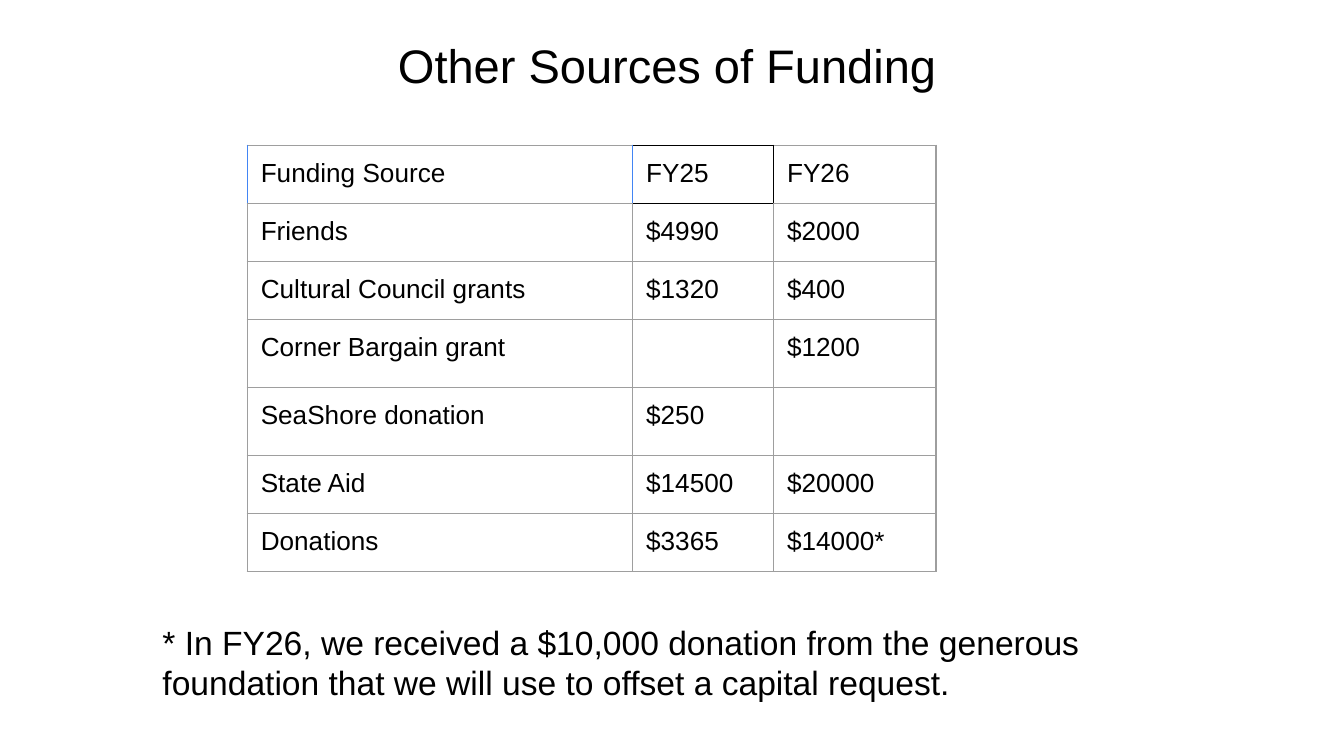
import lxml.etree
import pptx
import pptx.dml.color
import pptx.enum.text
import pptx.oxml.ns
import pptx.util

Pt = pptx.util.Pt
RGBColor = pptx.dml.color.RGBColor
ANCHOR = pptx.enum.text.MSO_ANCHOR
qn = pptx.oxml.ns.qn

BLACK = RGBColor(0x00, 0x00, 0x00)
GREY = RGBColor(0x9E, 0x9E, 0x9E)
BLUE = RGBColor(0x42, 0x85, 0xF4)

TITLE = "Other Sources of Funding"
FUNDING = [
    ("Funding Source", "FY25", "FY26"),
    ("Friends", "$4990", "$2000"),
    ("Cultural Council grants", "$1320", "$400"),
    ("Corner Bargain grant", "", "$1200"),
    ("SeaShore donation", "$250", ""),
    ("State Aid", "$14500", "$20000"),
    ("Donations", "$3365", "$14000*"),
]
FOOTNOTE = ("* In FY26, we received a $10,000 donation from the generous "
            "foundation that we will use to offset a capital request.")

TITLE_AREA = (206, 11.5, 311, 46)
FOOTNOTE_AREA = (80, 326, 559, 57)
TABLE_LEFT, TABLE_TOP = 132.5, 77.8
COLUMN_WIDTHS = (206.5, 75.5, 87)
ROW_HEIGHT, GAP_ROW_HEIGHT = 31.1, 34.5
INSET = 7.2
BORDER_WIDTH = 0.75

SIDES = ("L", "R", "T", "B")
# (row, column, side) of the borders that are not grey; shared edges appear twice
ACCENT_BORDERS = {
    (0, 0, "L"): BLUE, (0, 0, "R"): BLUE, (0, 1, "L"): BLUE,
    (0, 1, "T"): BLACK, (0, 1, "R"): BLACK, (0, 2, "L"): BLACK,
    (0, 1, "B"): BLACK, (1, 1, "T"): BLACK,
}


def set_all(target, values):
    for name, value in values.items():
        setattr(target, name, value)


def write(frame, text, size):
    span = frame.paragraphs[0].add_run()
    span.text = text
    set_all(span.font, {"name": "Arial", "size": Pt(size)})
    span.font.color.rgb = BLACK


def format_frame(frame, anchor):
    set_all(frame, {
        "word_wrap": True, "vertical_anchor": anchor,
        "auto_size": pptx.enum.text.MSO_AUTO_SIZE.NONE,
        "margin_left": Pt(INSET), "margin_right": Pt(INSET),
        "margin_top": Pt(INSET), "margin_bottom": Pt(INSET),
    })


def add_border(cell, side, color):
    properties = cell._tc.get_or_add_tcPr()
    line = lxml.etree.SubElement(properties, qn(f"a:ln{side}"), w=str(Pt(BORDER_WIDTH)))
    fill = lxml.etree.SubElement(line, qn("a:solidFill"))
    lxml.etree.SubElement(fill, qn("a:srgbClr"), val=str(color))


def add_title(page):
    title = page.shapes.title
    set_all(title, dict(zip(("left", "top", "width", "height"), map(Pt, TITLE_AREA))))
    format_frame(title.text_frame, ANCHOR.MIDDLE)
    title.text_frame.paragraphs[0].alignment = pptx.enum.text.PP_ALIGN.LEFT
    write(title.text_frame, TITLE, 25.2)


def add_funding_table(page):
    heights = [ROW_HEIGHT if all(row) else GAP_ROW_HEIGHT for row in FUNDING]
    table = page.shapes.add_table(
        len(FUNDING), len(COLUMN_WIDTHS), Pt(TABLE_LEFT), Pt(TABLE_TOP),
        Pt(sum(COLUMN_WIDTHS)), Pt(sum(heights))).table
    set_all(table, {"first_row": False, "horz_banding": False})
    for column, width in zip(table.columns, COLUMN_WIDTHS):
        column.width = Pt(width)
    for row_index, values in enumerate(FUNDING):
        table.rows[row_index].height = Pt(heights[row_index])
        for column_index, text in enumerate(values):
            cell = table.cell(row_index, column_index)
            set_all(cell, {f"margin_{side}": Pt(INSET)
                           for side in ("left", "right", "top", "bottom")})
            cell.vertical_anchor = ANCHOR.TOP
            for side in SIDES:
                add_border(cell, side,
                           ACCENT_BORDERS.get((row_index, column_index, side), GREY))
            cell.fill.background()
            if text:
                write(cell.text_frame, text, 14)


def add_footnote(page):
    box = page.shapes.add_textbox(*map(Pt, FOOTNOTE_AREA))
    format_frame(box.text_frame, ANCHOR.TOP)
    write(box.text_frame, FOOTNOTE, 18)


def main():
    deck = pptx.Presentation()
    set_all(deck, {"slide_width": Pt(720), "slide_height": Pt(405)})
    page = deck.slides.add_slide(deck.slide_layouts[5])
    add_title(page)
    add_funding_table(page)
    add_footnote(page)
    deck.save("out.pptx")


if __name__ == "__main__":
    main()
